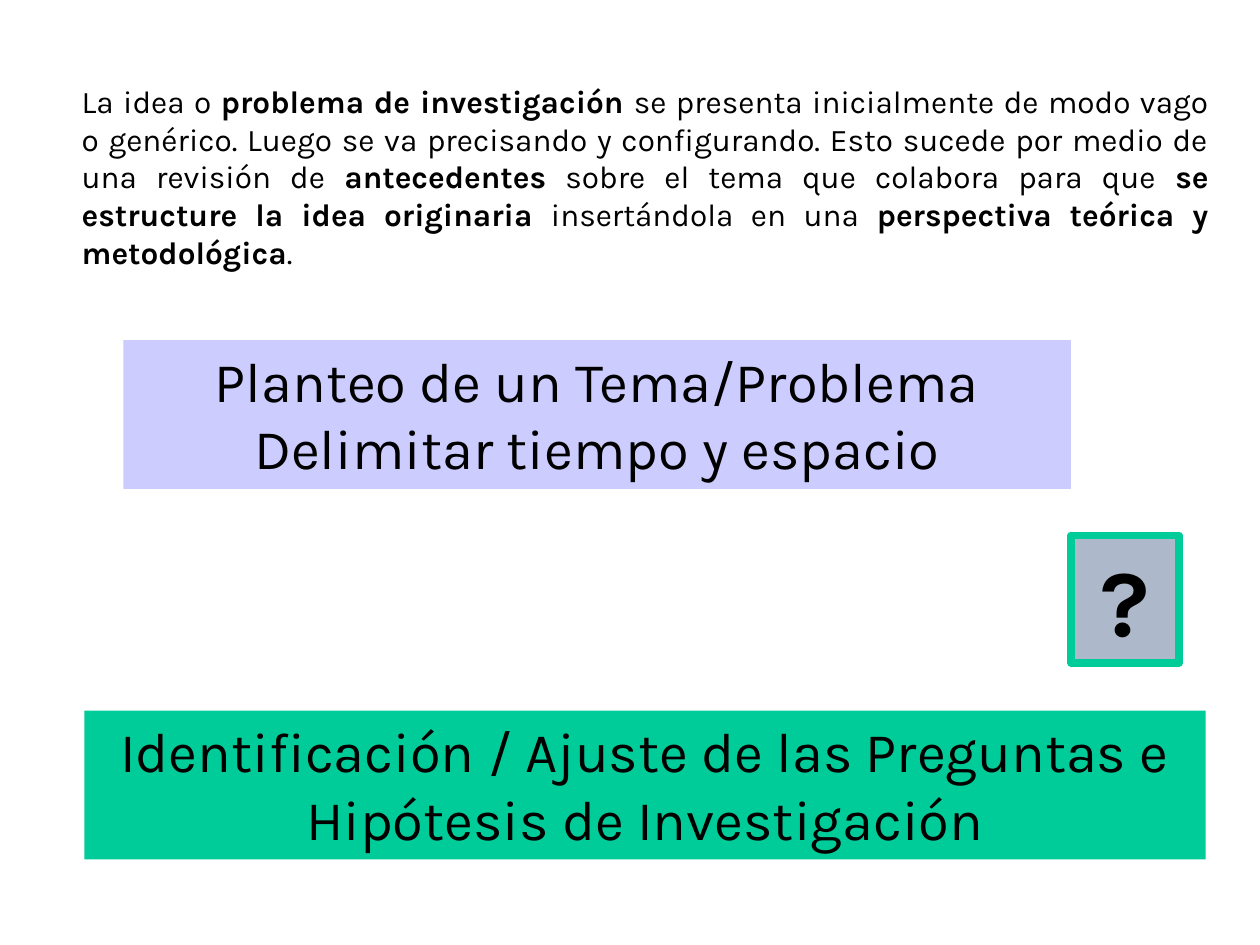
from pptx import Presentation
from pptx.dml.color import RGBColor
from pptx.enum.shapes import MSO_SHAPE
from pptx.enum.text import MSO_ANCHOR, MSO_AUTO_SIZE, PP_ALIGN
from pptx.util import Inches, Pt

THEME = {
    "font": "Karla", "text": "000000", "lilac": "CCCCFF", "green": "00CC99",
    "grey": "ADB9CA", "body": 18, "heading": 32, "mark": 54, "border": 4.5,
}

# Paragraphs are lists of (text, bold) runs.
INTRO = [[
    ("La idea o ", False),
    ("problema de investigación ", True),
    ("se presenta inicialmente de modo vago o genérico. Luego se va precisando "
     "y configurando. Esto sucede por medio de una revisión de ", False),
    ("antecedentes", True),
    (" sobre el tema que colabora para que ", False),
    ("se estructure la idea originaria ", True),
    ("insertándola en una ", False),
    ("perspectiva teórica y metodológica", True),
    (".", False),
]]
TOPIC = [[("Planteo de un Tema/Problema", False)],
         [("Delimitar tiempo y espacio", False)]]
QUESTIONS = [[("Identificación / Ajuste de las Preguntas e "
               "Hipótesis de Investigación", False)]]
MARK = [[("?", True)]]

# Box (left, top, width, height), paragraphs, size, fill, border
BLOCKS = [
    ((0.98, 2.7, 7.52, 1.18), TOPIC, "heading", "lilac", None),
    ((0.67, 5.64, 8.9, 1.18), QUESTIONS, "heading", "green", None),
    ((8.5, 4.25, 0.86, 1.01), MARK, "mark", "grey", "green"),
]


def color(name):
    return RGBColor.from_string(THEME[name])


def write(sp, paragraphs, size, align):
    tf = sp.text_frame
    frame = {"word_wrap": True, "vertical_anchor": MSO_ANCHOR.TOP,
             "auto_size": MSO_AUTO_SIZE.SHAPE_TO_FIT_TEXT}
    for name, value in frame.items():
        setattr(tf, name, value)
    for i, runs in enumerate(paragraphs):
        p = tf.add_paragraph() if i else tf.paragraphs[0]
        p.alignment = align
        for text, bold in runs:
            r = p.add_run()
            r.text = text
            font = {"name": THEME["font"], "size": Pt(THEME[size]), "bold": bold}
            for name, value in font.items():
                setattr(r.font, name, value)
            r.font.color.rgb = color("text")


def add_block(s, box, paragraphs, size, fill, border):
    sp = s.shapes.add_shape(MSO_SHAPE.RECTANGLE, *map(Inches, box))
    sp.shadow.inherit = False
    sp.fill.solid()
    sp.fill.fore_color.rgb = color(fill)
    if border:
        sp.line.color.rgb = color(border)
        sp.line.width = Pt(THEME["border"])
    else:
        sp.line.fill.background()
    write(sp, paragraphs, size, PP_ALIGN.CENTER)


def main():
    prs = Presentation()
    prs.slide_width, prs.slide_height = Inches(10), Inches(7.5)
    s = prs.slides.add_slide(prs.slide_layouts[6])
    intro = s.shapes.add_textbox(*map(Inches, (0.55, 0.6, 9.14, 1.61)))
    write(intro, INTRO, "body", PP_ALIGN.JUSTIFY)
    for block in BLOCKS:
        add_block(s, *block)
    prs.save("out.pptx")


if __name__ == "__main__":
    main()
